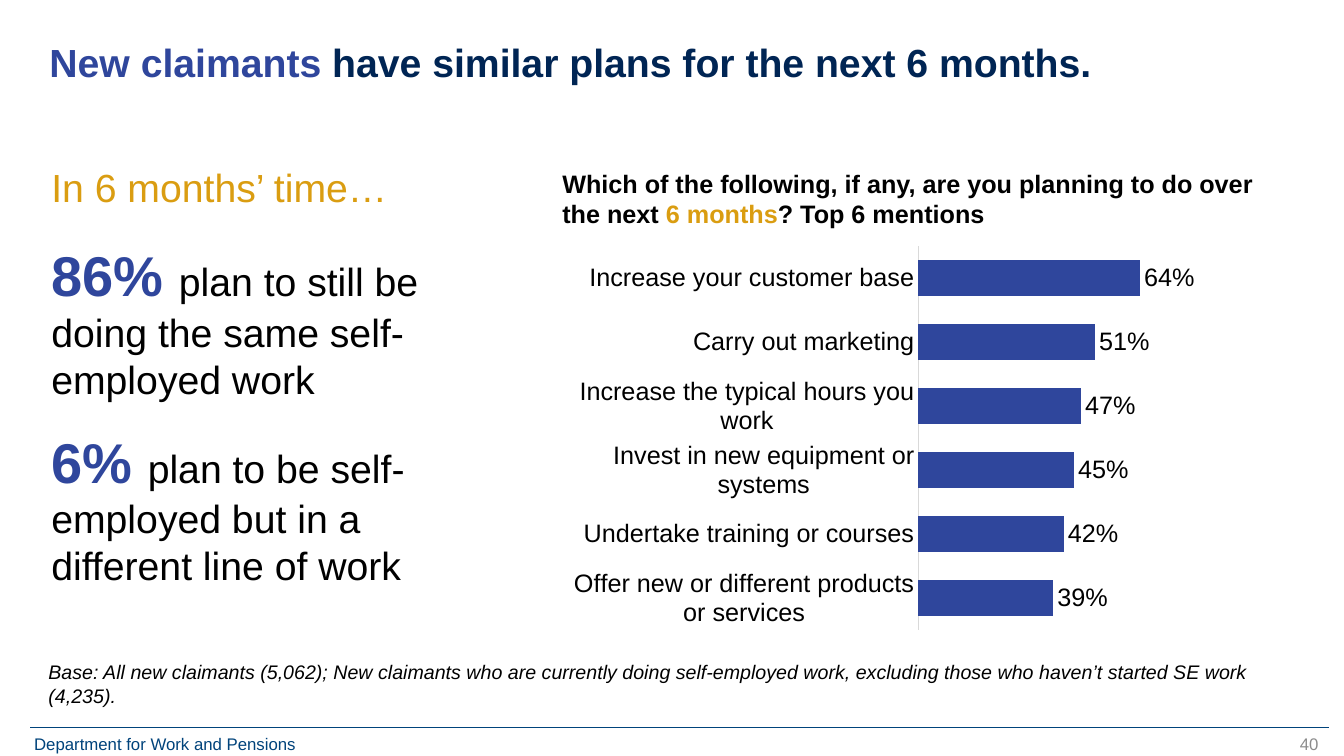
import dataclasses
import lxml.etree
import pptx
import pptx.chart.data
import pptx.dml.color
import pptx.enum.chart
import pptx.enum.shapes
import pptx.enum.text
import pptx.oxml.ns
import pptx.util

qn = pptx.oxml.ns.qn
ALIGN = pptx.enum.text.PP_ALIGN


@dataclasses.dataclass(frozen=True)
class Theme:
    """Colours, type sizes and the font of the slide."""
    font: str = "Arial"
    blue: str = "2F469C"
    navy: str = "002554"
    gold: str = "DA9D11"
    black: str = "000000"
    teal: str = "00437B"
    gray: str = "8C8C8C"
    pale: str = "D9D9D9"
    huge: int = 40
    large: int = 28
    mid: int = 18
    note: int = 14
    small: int = 12


THEME = Theme()
CELL = 0.1
LEAD = 7.7
STEP = 18.5
PLANS = {
    "Offer new or different products or services": 0.39,
    "Undertake training or courses": 0.42,
    "Invest in new equipment or systems": 0.45,
    "Increase the typical hours you work": 0.47,
    "Carry out marketing": 0.51,
    "Increase your customer base": 0.64,
}
FACTS = [
    ("86% ", "plan to still be doing the same self-employed work"),
    ("6% ", "plan to be self-employed but in a different line of work"),
]


def span(*cells):
    """Turn grid cells into lengths."""
    return [pptx.util.Inches(cell * CELL) for cell in cells]


def tint(hue):
    """Make a colour from its hex code."""
    return pptx.dml.color.RGBColor.from_string(hue)


def assign(item, form):
    """Set each value of a format on an item."""
    for name, value in form.items():
        setattr(item, name, value)


def style(font, size, hue, **form):
    """Format a font."""
    assign(font, {"name": THEME.font, "size": pptx.util.Pt(size), **form})
    font.color.rgb = tint(hue)


def write(shape, box, runs, gap=0, inset=True, **form):
    """Place a shape and fill it with one paragraph of styled runs."""
    assign(shape, dict(zip(("left", "top", "width", "height"), span(*box))))
    frame = shape.text_frame
    assign(frame, {"word_wrap": True,
                   "auto_size": pptx.enum.text.MSO_AUTO_SIZE.NONE,
                   "vertical_anchor": pptx.enum.text.MSO_ANCHOR.TOP})
    if not inset:
        sides = ("left", "top", "right", "bottom")
        assign(frame, {f"margin_{side}": 0 for side in sides})
    para = frame.paragraphs[0]
    space = pptx.util.Pt(gap)
    assign(para, {"alignment": ALIGN.LEFT, "space_before": space,
                  "space_after": space, **form})
    for text, size, hue, face in runs:
        run = para.add_run()
        run.text = text
        style(run.font, size, hue, **face)
    return para


def add_text(slide, box, runs, **form):
    """Add a text box."""
    return write(slide.shapes.add_textbox(*span(*box)), box, runs, **form)


def add_title(slide, box):
    """Fill the title."""
    bold = {"bold": True}
    write(slide.shapes.title, box, [
        ("New claimants", THEME.large, THEME.blue, bold),
        (" have similar plans for the next 6 months.",
         THEME.large, THEME.navy, bold),
    ], inset=False, line_spacing=0.9)


def add_base(slide, box):
    """Fill the body with the base note, free of bullets."""
    para = write(slide.placeholders[1], box, [(
        "Base: All new claimants (5,062); New claimants who are currently "
        "doing self-employed work, excluding those who haven’t started SE "
        "work (4,235).", THEME.note, THEME.black, {"italic": True})],
        gap=5, inset=False)
    props = para._p.get_or_add_pPr()
    for name in ("marL", "indent"):
        props.set(name, "0")
    lxml.etree.SubElement(props, qn("a:buNone"))


def add_facts(slide, box):
    """Stack the heading and the key figures."""
    x, y, w, h = box
    add_text(slide, (x, y, w, 4.7),
             [("In 6 months’ time…", THEME.large, THEME.gold, {})],
             gap=4, inset=False)
    for row, (share, words) in enumerate(FACTS):
        add_text(slide, (x, y + LEAD + row * STEP, w, h - LEAD - STEP), [
            (share, THEME.huge, THEME.blue, {"bold": True}),
            (words, THEME.large, THEME.black, {"bold": False}),
        ], gap=4, inset=False)


def fix_plot(chart, box, inner):
    """Pin the inner plot area inside the chart box."""
    area = chart._chartSpace.find(".//" + qn("c:plotArea"))
    for old in area.findall(qn("c:layout")):
        area.remove(old)
    outer = lxml.etree.Element(qn("c:layout"))
    area.insert(0, outer)
    manual = lxml.etree.SubElement(outer, qn("c:manualLayout"))
    wide, high = box[2:]
    x, y, w, h = inner
    marks = {"layoutTarget": "inner", "xMode": "edge", "yMode": "edge",
             "x": x / wide, "y": y / high, "w": w / wide, "h": h / high}
    for name, value in marks.items():
        lxml.etree.SubElement(manual, qn("c:" + name)).set("val", str(value))


def add_bars(slide, box):
    """Draw the bar chart of plans."""
    data = pptx.chart.data.CategoryChartData(number_format="0%")
    data.categories = list(PLANS)
    data.add_series("Series 1", list(PLANS.values()))
    kind = pptx.enum.chart.XL_CHART_TYPE.BAR_CLUSTERED
    chart = slide.shapes.add_chart(kind, *span(*box), data).chart
    assign(chart, {"has_title": False, "has_legend": False})
    style(chart.font, THEME.mid, THEME.black)
    none = pptx.enum.chart.XL_TICK_MARK.NONE
    axis = chart.category_axis
    assign(axis, {"major_tick_mark": none, "minor_tick_mark": none,
                  "has_major_gridlines": False})
    axis.format.line.color.rgb = tint(THEME.pale)
    axis.format.line.width = pptx.util.Pt(0.75)
    style(axis.tick_labels.font, THEME.mid, THEME.black)
    assign(chart.value_axis, {"minimum_scale": 0, "maximum_scale": 1,
                              "has_major_gridlines": False, "visible": False})
    plot = chart.plots[0]
    assign(plot, {"gap_width": 75, "vary_by_categories": False,
                  "has_data_labels": True})
    fill = plot.series[0].format.fill
    fill.solid()
    fill.fore_color.rgb = tint(THEME.blue)
    end = pptx.enum.chart.XL_LABEL_POSITION.OUTSIDE_END
    assign(plot.data_labels, {"show_value": True, "position": end,
                              "number_format": "0%",
                              "number_format_is_linked": False})
    style(plot.data_labels.font, THEME.mid, THEME.black)
    fix_plot(chart, box, (36.3, 0.5, 34.4, 38.1))


def add_plans(slide, box):
    """Set the survey question above its chart."""
    x, y, w, h = box
    bold = {"bold": True}
    add_text(slide, (x, y, w, 4.8), [
        ("Which of the following, if any, are you planning to do over "
         "the next ", THEME.mid, THEME.black, bold),
        ("6 months", THEME.mid, THEME.gold, bold),
        ("? Top 6 mentions", THEME.mid, THEME.black, bold),
    ], gap=5)
    add_bars(slide, (x, y + LEAD, w, h - LEAD))


def add_foot(slide, box):
    """Draw the footer rule, owner and page number."""
    x, y, w, h = box
    kind = pptx.enum.shapes.MSO_CONNECTOR.STRAIGHT
    rule = slide.shapes.add_connector(kind, *span(x, y, x + w, y))
    rule.line.color.rgb = tint(THEME.teal)
    rule.line.width = pptx.util.Pt(0.5)
    lxml.etree.SubElement(rule._element.spPr, qn("a:effectLst"))
    add_text(slide, (x - 0.6, y + 0.1, 32.3, h), [
        ("Department for Work and Pensions", THEME.small, THEME.teal, {})],
        alignment=ALIGN.JUSTIFY)
    add_text(slide, (x + w - 30, y + 0.1, 30, h),
             [("40", THEME.small, THEME.gray, {})], alignment=ALIGN.RIGHT)


def main():
    """Build and save the slide."""
    deck = pptx.Presentation()
    wide, high = span(133.33, 75)
    assign(deck, {"slide_width": wide, "slide_height": high})
    slide = deck.slides.add_slide(deck.slide_layouts[1])
    add_foot(slide, (3, 72.2, 128.8, 2.7))
    add_title(slide, (4.9, 4.3, 123.6, 8.5))
    add_base(slide, (4.8, 65.5, 123.6, 3.1))
    add_facts(slide, (5.1, 16.2, 40.3, 42.4))
    add_plans(slide, (54.8, 16.2, 73.6, 46.9))
    deck.save("out.pptx")


if __name__ == "__main__":
    main()
